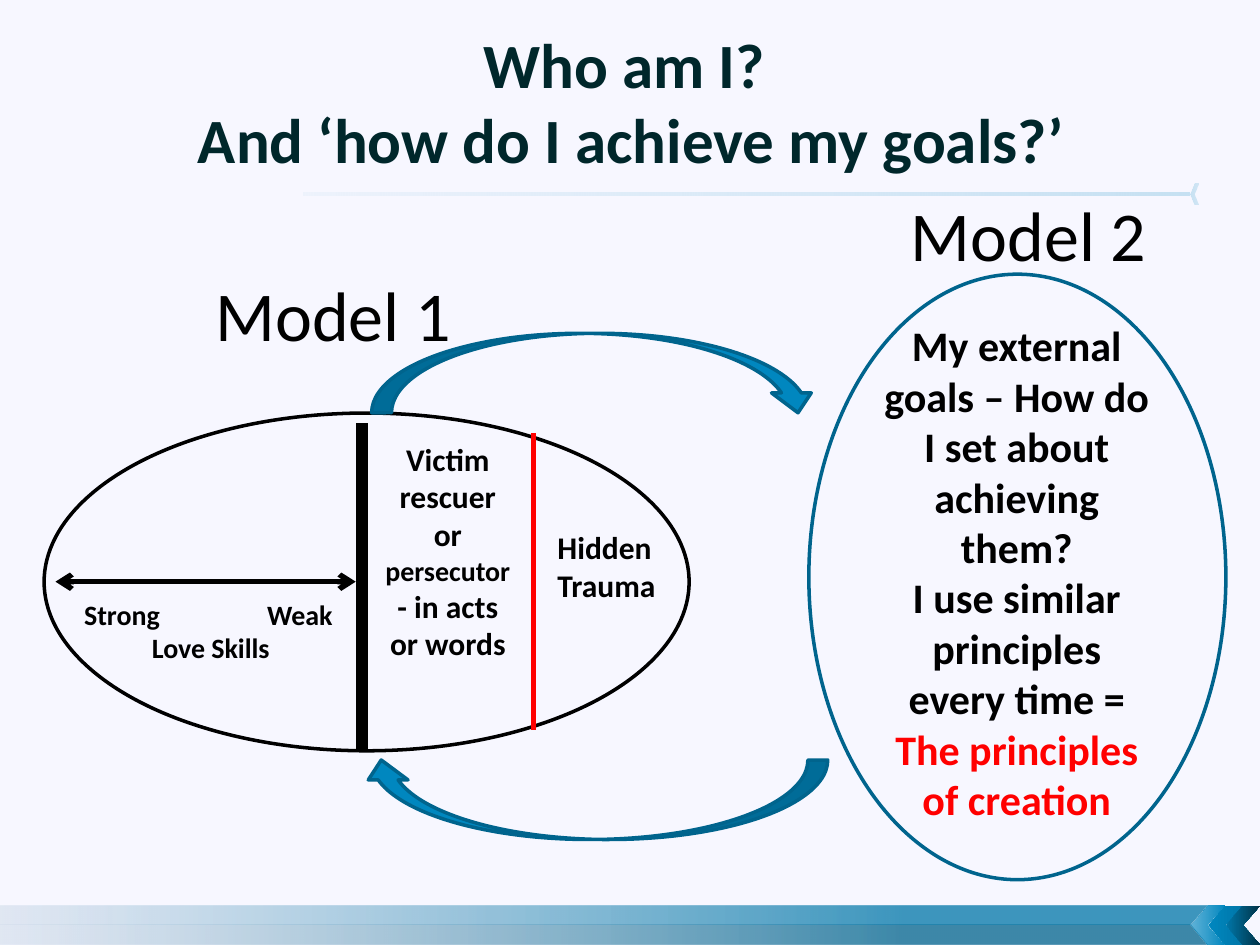
from dataclasses import dataclass

from lxml.etree import SubElement
from pptx import Presentation
from pptx.dml.color import RGBColor
from pptx.enum.shapes import MSO_CONNECTOR, MSO_SHAPE
from pptx.enum.text import MSO_ANCHOR, MSO_AUTO_SIZE, PP_ALIGN
from pptx.oxml.ns import qn
from pptx.util import Pt


@dataclass(frozen=True)
class Theme:
    font: str = "Calibri"
    background: str = "F7F7FF"
    title: str = "00272B"
    ink: str = "000000"
    accent: str = "FF0000"
    blue: str = "0087BF"
    mid_blue: str = "0077A9"
    deep_blue: str = "00648D"
    navy: str = "003246"
    pale: str = "CCD9E8"
    title_size: int = 36
    label_size: int = 40
    goal_size: int = 24
    body_size: int = 18
    small_size: int = 16


THEME = Theme()


def write(para, text, *, size, color=THEME.ink, bold=True, align=None):
    """Add a run to the paragraph; a newline in the text is a line break."""
    if align is not None:
        para.alignment = align
    for index, line in enumerate(text.split("\n")):
        if index:
            para.add_line_break()
        span = para.add_run()
        span.text = line
        span.font.name = THEME.font
        span.font.size = Pt(size)
        span.font.bold = bold
        span.font.color.rgb = RGBColor.from_string(color)


def add_right_tab(para, position):
    tabs = SubElement(para._p.get_or_add_pPr(), qn("a:tabLst"))
    SubElement(tabs, qn("a:tab"), pos=str(Pt(position)), algn="r")


class SlideBuilder:
    def __init__(self, page, theme):
        self.page = page
        self.theme = theme
        page.background.fill.solid()
        page.background.fill.fore_color.rgb = RGBColor.from_string(theme.background)

    def title(self, text, left, top, width, height):
        box = self.page.shapes.title
        box.left, box.top, box.width, box.height = map(Pt, (left, top, width, height))
        frame = box.text_frame
        frame.auto_size = MSO_AUTO_SIZE.NONE
        frame.vertical_anchor = MSO_ANCHOR.MIDDLE
        write(frame.paragraphs[0], text, size=self.theme.title_size,
              color=self.theme.title, align=PP_ALIGN.CENTER)

    def text_box(self, left, top, width, height, count=1, wrap=True):
        """Return the paragraphs of a new text box."""
        frame = self.page.shapes.add_textbox(*map(Pt, (left, top, width, height))).text_frame
        frame.word_wrap = wrap
        for _ in range(count - 1):
            frame.add_paragraph()
        return frame.paragraphs

    def shape(self, kind, left, top, width, height, fill=None, line=None, rotation=0):
        shape = self.page.shapes.add_shape(kind, *map(Pt, (left, top, width, height)))
        shape.shadow.inherit = False
        shape.rotation = rotation
        if fill:
            shape.fill.solid()
            shape.fill.fore_color.rgb = RGBColor.from_string(fill)
        else:
            shape.fill.background()
        if line:
            shape.line.color.rgb = RGBColor.from_string(line)
            shape.line.width = Pt(2)
        else:
            shape.line.fill.background()
        return shape

    def gradient(self, shape, *stops):
        """Fill from right to left; each stop is position %, colour, opacity %."""
        shape.fill.gradient()
        shape.fill.gradient_angle = 180
        for stop, (position, color, opacity) in zip(shape.fill.gradient_stops, stops):
            stop.position = position / 100
            stop.color.rgb = RGBColor.from_string(color)
            SubElement(stop._gs[0], qn("a:alpha"), val=str(opacity * 1000))

    def chevron(self, left, top, width, height, *stops):
        """Add a chevron that points left."""
        shape = self.shape(MSO_SHAPE.CHEVRON, left, top, width, height)
        shape._element.spPr.xfrm.set("flipH", "1")
        self.gradient(shape, *stops)

    def band(self, edge, middle, color):
        """Add half of the footer strip, slanted at its right end."""
        outline = self.page.shapes.build_freeform(Pt(690), Pt(edge), scale=1.0)
        corners = [(0, edge), (0, middle), (680, middle)]
        outline.add_line_segments([(Pt(x), Pt(y)) for x, y in corners], close=True)
        shape = outline.convert_to_shape()
        shape.shadow.inherit = False
        shape.line.fill.background()
        self.gradient(shape, (25, color, 75), (100, self.theme.pale, 50))

    def line(self, start, end, color, width, arrows=False):
        line = self.page.shapes.add_connector(
            MSO_CONNECTOR.STRAIGHT, *map(Pt, (*start, *end)))
        line.line.color.rgb = RGBColor.from_string(color)
        line.line.width = Pt(width)
        if arrows:
            for end_name in ("a:headEnd", "a:tailEnd"):
                SubElement(line.line._get_or_add_ln(), qn(end_name), type="arrow")
        SubElement(line._element.spPr, qn("a:effectLst"))


def add_decoration(builder):
    theme = builder.theme
    builder.band(540, 528.5, theme.deep_blue)
    builder.band(517.5, 528.5, theme.mid_blue)
    shades = [
        ((0, theme.blue, 60), (100, theme.blue, 100)),
        ((0, theme.blue, 100), (100, theme.mid_blue, 100)),
        ((0, theme.mid_blue, 100), (100, theme.navy, 100)),
    ]
    for index, stops in enumerate(shades):
        builder.chevron(680.4 + 10.1 * index, 517.5, 19.5, 22.5, *stops)
    builder.chevron(680.4, 105, 4.3, 11.7, (0, theme.blue, 20), (100, theme.blue, 15))
    rule = builder.shape(MSO_SHAPE.RECTANGLE, 173.5, 110, 506.5, 1.6)
    builder.gradient(rule, (0, theme.blue, 20), (100, theme.blue, 4))


def add_inner_model(builder):
    theme = builder.theme
    builder.shape(MSO_SHAPE.OVAL, 25.2, 236, 368.6, 193, line=theme.ink)
    builder.line((206.8, 242), (206.8, 428.5), theme.ink, 7)
    builder.line((305, 247.7), (305, 417.4), theme.accent, 3)

    hidden, = builder.text_box(311.5, 298, 77, 51)
    write(hidden, "Hidden Trauma", size=theme.body_size)

    roles, deeds = builder.text_box(212.4, 247.7, 87, 135.4, count=2)
    write(roles, "Victim rescuer or ", size=theme.body_size, align=PP_ALIGN.CENTER)
    write(roles, "persecutor", size=theme.small_size)
    write(deeds, "- in acts or words", size=theme.body_size, align=PP_ALIGN.CENTER)

    builder.line((31.7, 332.4), (203.3, 332.4), theme.ink, 3, arrows=True)
    ends, skills = builder.text_box(41, 337.7, 159, 46, count=2)
    add_right_tab(ends, 142)
    write(ends, "Strong\tWeak", size=theme.small_size)
    write(skills, "Love Skills", size=theme.small_size, align=PP_ALIGN.CENTER)


def add_goal_model(builder):
    theme = builder.theme
    builder.shape(MSO_SHAPE.OVAL, 462.2, 156.7, 238.3, 346, line=theme.deep_blue)
    goals, principles = builder.text_box(496, 179.3, 170, 298, count=2)
    write(goals, "My external goals – How do I set about achieving them?",
          size=theme.goal_size, align=PP_ALIGN.CENTER)
    write(principles, "I use similar principles every time = ",
          size=theme.goal_size, align=PP_ALIGN.CENTER)
    write(principles, "The principles of creation", size=theme.goal_size, color=theme.accent)


def main():
    deck = Presentation()
    deck.slide_width, deck.slide_height = Pt(720), Pt(540)
    builder = SlideBuilder(deck.slides.add_slide(deck.slide_layouts[5]), THEME)

    add_decoration(builder)
    builder.title("Who am I? \nAnd ‘how do I achieve my goals?’", 36.7, 9.4, 648, 96.5)
    add_inner_model(builder)
    add_goal_model(builder)

    for left, top, width, rotation in [(212.4, 190.5, 255, 0), (206.5, 434.3, 266.5, 180)]:
        builder.shape(MSO_SHAPE.CURVED_DOWN_ARROW, left, top, width, 45.4,
                      fill=THEME.blue, line=THEME.deep_blue, rotation=rotation)
    for text, left, top in [("Model 1", 116, 151.4), ("Model 2", 513.4, 106)]:
        label, = builder.text_box(left, top, 150.5, 55.7, wrap=False)
        write(label, text, size=THEME.label_size, bold=False)

    deck.save("out.pptx")


if __name__ == "__main__":
    main()
